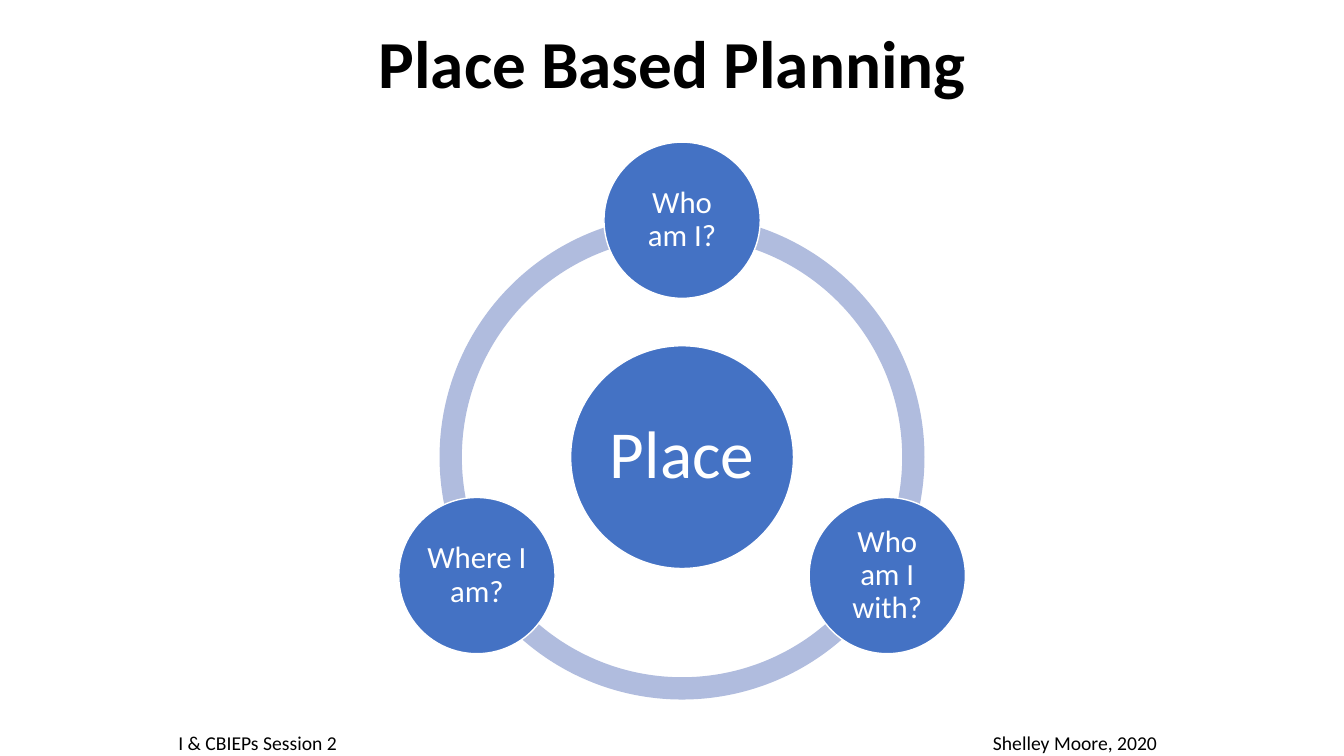
from math import cos, radians, sin

from lxml.etree import SubElement
from pptx import Presentation
from pptx.dml.color import RGBColor
from pptx.enum.shapes import MSO_SHAPE
from pptx.enum.text import MSO_ANCHOR, PP_ALIGN
from pptx.oxml.ns import qn
from pptx.util import Inches, Pt

COLORS = {"text": "000000", "circle": "4472C4", "ring": "B0BCDE", "white": "FFFFFF"}
FONT = "Calibri"


def rgb(name):
    return RGBColor.from_string(COLORS[name])


def style_text(p, size, color, bold=False):
    for r in p.runs:
        r.font.name = FONT
        r.font.size = Pt(size)
        r.font.bold = bold
        r.font.color.rgb = rgb(color)


def add_title(slide, x, y, w, h):
    tf = slide.shapes.add_textbox(Inches(x), Inches(y), Inches(w), Inches(h)).text_frame
    tf.word_wrap = True
    tf.vertical_anchor = MSO_ANCHOR.MIDDLE
    p = tf.paragraphs[0]
    p.text = "Place Based Planning"
    p.alignment = PP_ALIGN.CENTER
    p.line_spacing = 0.9
    style_text(p, 48, "text", bold=True)


def add_centred(slide, preset, cx, cy, size, color):
    sp = slide.shapes.add_shape(preset, Inches(cx - size / 2), Inches(cy - size / 2),
                                Inches(size), Inches(size))
    sp.shadow.inherit = False
    sp.fill.solid()
    sp.fill.fore_color.rgb = rgb(color)
    return sp


def add_circle(slide, cx, cy, size, label, font_size, wrap=True):
    sp = add_centred(slide, MSO_SHAPE.OVAL, cx, cy, size, "circle")
    sp.line.color.rgb = rgb("white")
    sp.line.width = Pt(1)
    tf = sp.text_frame
    tf.word_wrap = wrap
    tf.vertical_anchor = MSO_ANCHOR.MIDDLE
    tf.margin_left = tf.margin_right = tf.margin_top = tf.margin_bottom = Inches(0.03)
    p = tf.paragraphs[0]
    p.text = label
    p.alignment = PP_ALIGN.CENTER
    p.line_spacing = 0.9
    style_text(p, font_size, "white")


def add_cycle(slide, x, y, size):
    cx, cy = x + size / 2, y + size / 2

    # Ring in three arcs
    for start, end in [(90, 162), (18, 90), (162, 18)]:
        arc = add_centred(slide, MSO_SHAPE.BLOCK_ARC, cx, cy, size, "ring")
        arc.line.fill.background()
        # Angles are stored in 60000ths of a degree, adjustments in 100000ths
        arc.adjustments[0] = start * 0.6
        arc.adjustments[1] = end * 0.6
        arc.adjustments[2] = 0.046

    # Hub on one line, then questions clockwise from the top
    add_circle(slide, cx, cy, 2.21, "Place", 48, wrap=False)
    orbit = 2.35
    for i, question in enumerate(["Who am I?", "Who am I with?", "Where I am?"]):
        angle = radians(120 * i - 90)
        add_circle(slide, cx + orbit * cos(angle), cy + orbit * sin(angle),
                   1.55, question, 22)


def add_footer(slide, x, y, w, h):
    tf = slide.shapes.add_textbox(Inches(x), Inches(y), Inches(w), Inches(h)).text_frame
    tf.word_wrap = True
    p = tf.paragraphs[0]
    tabs = SubElement(p._p.get_or_add_pPr(), qn("a:tabLst"))
    SubElement(tabs, qn("a:tab"), pos=str(Inches(8.08)), algn="l")
    p.text = "I & CBIEPs Session 2\tShelley Moore, 2020"
    style_text(p, 14, "text")


def main():
    prs = Presentation()
    prs.slide_width = Inches(13.33)
    prs.slide_height = Inches(7.5)
    slide = prs.slides.add_slide(prs.slide_layouts[6])
    add_title(slide, 1.91, 0.2, 9.52, 0.93)
    add_cycle(slide, 4.36, 2.13, 4.81)
    add_footer(slide, 1.67, 7.2, 10, 0.34)
    prs.save("out.pptx")


if __name__ == "__main__":
    main()
